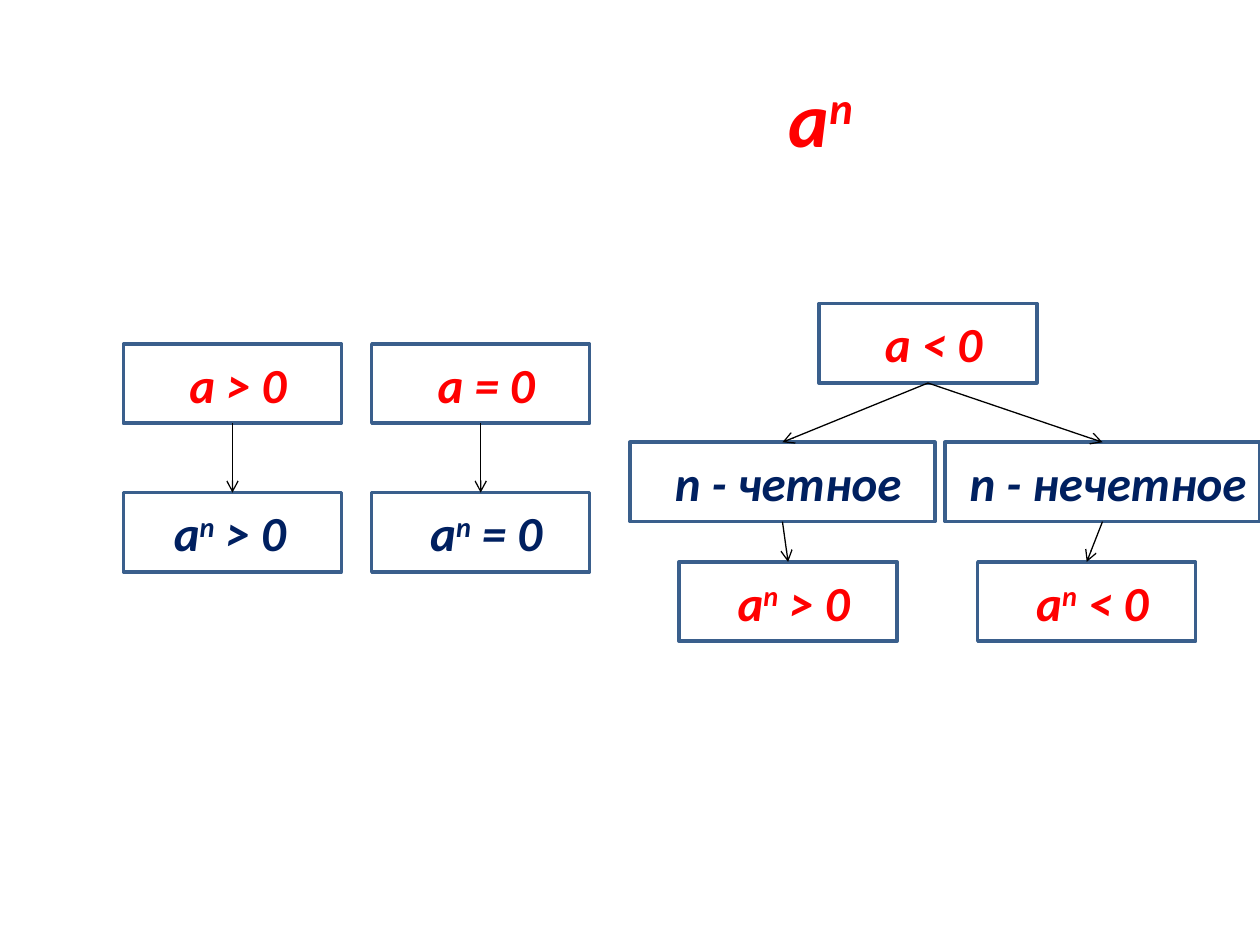
"""Build a slide with the sign rules for the power aⁿ as a tree of boxes."""
from lxml.etree import SubElement
from pptx import Presentation
from pptx.dml.color import RGBColor
from pptx.enum.shapes import MSO_CONNECTOR as Connector, MSO_SHAPE as Shape
from pptx.enum.text import MSO_ANCHOR as Anchor, PP_ALIGN as Align
from pptx.oxml.ns import qn
from pptx.util import Inches, Pt

RED = RGBColor(0xFF, 0x00, 0x00)
NAVY = RGBColor(0x00, 0x20, 0x60)
BORDER = RGBColor(0x3A, 0x5F, 0x8C)
WHITE = RGBColor(0xFF, 0xFF, 0xFF)
BLACK = RGBColor(0x00, 0x00, 0x00)

BOX_WIDTH, BOX_HEIGHT = 1.73, 0.63
COLUMNS = {"positive": 0.98, "zero": 2.95, "even": 5, "even result": 5.39,
           "negative": 6.5, "odd": 7.5, "odd result": 7.76}
ROWS = {"negative": 2.41, "condition": 2.73, "parity": 3.51, "result": 3.91, "last": 4.46}
LEFT_INSET, RIGHT_INSET, WIDE_INSET = 0.1, 0.01, 0.14

# name: column, row, width, colour, right inset, (base, exponent, rest)
BOXES = {
    "n even": ("even", "parity", 2.42, NAVY, RIGHT_INSET, ("n - четное", "", "")),
    "a > 0": ("positive", "condition", BOX_WIDTH, RED, RIGHT_INSET, ("a > 0", "", "")),
    "even power": ("even result", "last", BOX_WIDTH, RED, RIGHT_INSET, ("a", "n", " > 0")),
    "positive power": ("positive", "result", BOX_WIDTH, NAVY, WIDE_INSET, ("a", "n", " > 0")),
    "a = 0": ("zero", "condition", BOX_WIDTH, RED, RIGHT_INSET, ("a = 0", "", "")),
    "zero power": ("zero", "result", BOX_WIDTH, NAVY, RIGHT_INSET, ("a", "n", " = 0")),
    "a < 0": ("negative", "negative", BOX_WIDTH, RED, RIGHT_INSET, ("a < 0", "", "")),
    "n odd": ("odd", "parity", 2.5, NAVY, RIGHT_INSET, ("n - нечетное", "", "")),
    "odd power": ("odd result", "last", BOX_WIDTH, RED, RIGHT_INSET, ("a", "n", " < 0")),
}
ARROWS = [("a > 0", "positive power"), ("a = 0", "zero power"), ("a < 0", "n even"),
          ("a < 0", "n odd"), ("n even", "even power"), ("n odd", "odd power")]
TOP_SITE, BOTTOM_SITE = 0, 2


def write_power(shape, parts, size, color, left_inset, right_inset):
    frame = shape.text_frame
    frame.word_wrap = True
    frame.vertical_anchor = Anchor.MIDDLE
    frame.margin_left, frame.margin_right = Inches(left_inset), Inches(right_inset)
    paragraph = frame.paragraphs[0]
    paragraph.alignment = Align.CENTER
    font = paragraph.font
    font.name, font.size, font.bold, font.italic = "Calibri", Pt(size), True, True
    font.color.rgb = color
    for part, baseline in zip(parts, ("0", "30000", "0")):
        if part:
            run = paragraph.add_run()
            run.text = part
            run._r.get_or_add_rPr().set("baseline", baseline)


def add_box(slide, column, row, width, color, right_inset, parts):
    shape = slide.shapes.add_shape(Shape.RECTANGLE, Inches(COLUMNS[column]),
                                   Inches(ROWS[row]), Inches(width), Inches(BOX_HEIGHT))
    shape.shadow.inherit = False
    shape.fill.solid()
    shape.fill.fore_color.rgb = WHITE
    shape.line.color.rgb = BORDER
    shape.line.width = Pt(2)
    write_power(shape, parts, 28, color, LEFT_INSET, right_inset)
    return shape


def add_arrow(slide, source, target):
    arrow = slide.shapes.add_connector(Connector.STRAIGHT, 0, 0, 0, 0)
    arrow.begin_connect(source, BOTTOM_SITE)
    arrow.end_connect(target, TOP_SITE)
    arrow.line.color.rgb = BLACK
    arrow.line.width = Pt(0.75)
    SubElement(arrow.line._get_or_add_ln(), qn("a:tailEnd"), type="arrow")
    SubElement(arrow._element.spPr, qn("a:effectLst"))


def main():
    presentation = Presentation()
    presentation.slide_width, presentation.slide_height = Inches(10), Inches(7.5)
    slide = presentation.slides.add_slide(presentation.slide_layouts[6])
    title = slide.shapes.add_textbox(Inches(0.5), Inches(0.3), Inches(9), Inches(1.25))
    write_power(title, ("a", "n", ""), 44, RED, 3.13, 0.1)
    boxes = {name: add_box(slide, *box) for name, box in BOXES.items()}
    for source, target in ARROWS:
        add_arrow(slide, boxes[source], boxes[target])
    presentation.save("out.pptx")


if __name__ == "__main__":
    main()
